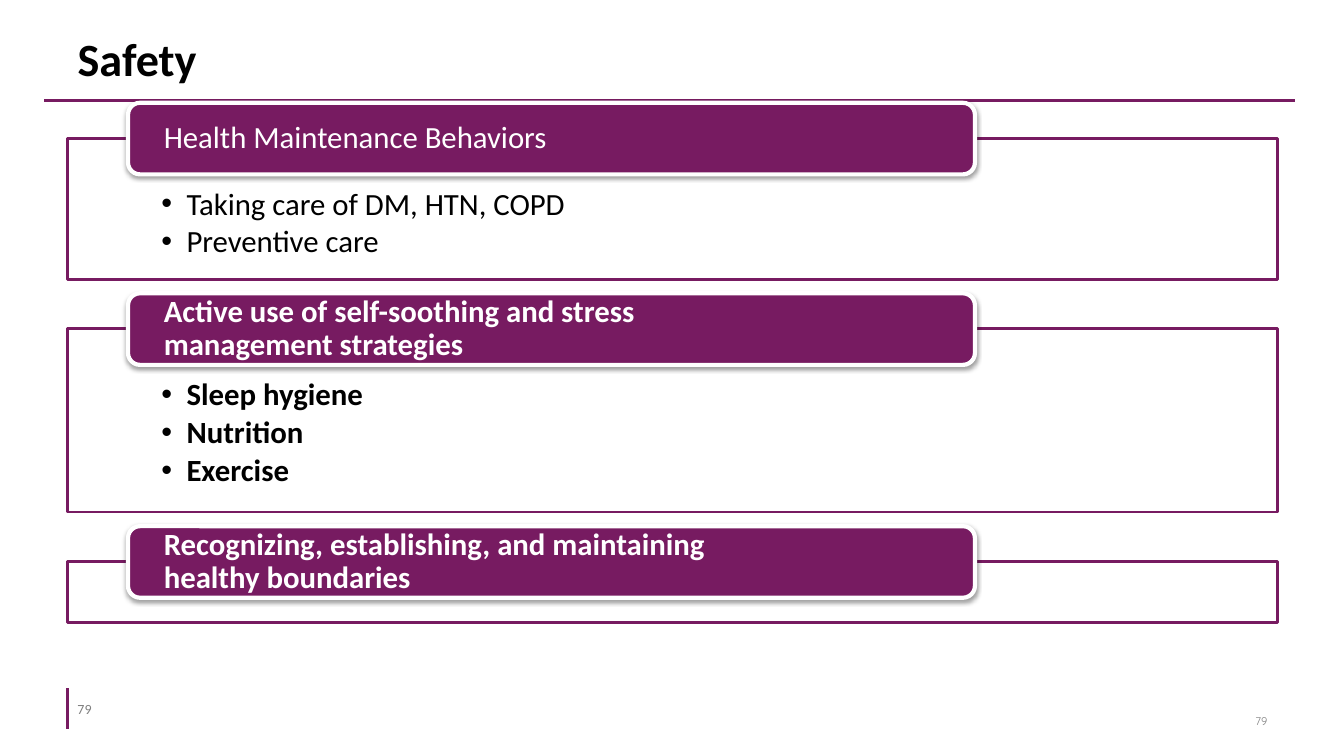
from lxml import etree
from pptx import Presentation
from pptx.dml.color import RGBColor
from pptx.enum.shapes import MSO_CONNECTOR as CONN, MSO_SHAPE as SHAPE
from pptx.enum.text import MSO_ANCHOR as ANCHOR, MSO_AUTO_SIZE as AUTO, PP_ALIGN as ALIGN
from pptx.oxml import parse_xml
from pptx.oxml.ns import nsdecls, qn
from pptx.util import Inches, Pt

PLUM = RGBColor(0x77, 0x1B, 0x61)
WHITE = RGBColor(0xFF, 0xFF, 0xFF)
BLACK = RGBColor(0, 0, 0)
GRAY = RGBColor(0x80, 0x80, 0x80)

LEFT, WIDTH = 0.67, 12
FIRST_TOP, GAP = 1.37, 0.49
TAB_RISE = 0.35

SECTIONS = [
    ("Health Maintenance Behaviors", ["Taking care of DM, HTN, COPD", "Preventive care"], 1.4, False),
    ("Active use of self-soothing and stress\nmanagement strategies",
     ["Sleep hygiene", "Nutrition", "Exercise"], 1.82, True),
    ("Recognizing, establishing, and maintaining\nhealthy boundaries", [], 0.61, True),
]


def place(sp, x, y, w, h):
    """Move and size a shape, in inches."""
    sp.left, sp.top, sp.width, sp.height = (Inches(v) for v in (x, y, w, h))


def set_frame(tf, anchor, insets=(0.1, 0.05, 0.1, 0.05)):
    """Set wrapping, anchor and insets of a text frame."""
    tf.word_wrap = True
    tf.auto_size = AUTO.NONE
    tf.vertical_anchor = anchor
    tf.margin_left, tf.margin_top, tf.margin_right, tf.margin_bottom = map(Inches, insets)


def format_paragraph(p, size, color, bold=False, name="Calibri", align=ALIGN.LEFT, after=0, spacing=0.9):
    """Format a paragraph and all of its runs."""
    p.alignment = align
    p.line_spacing = spacing
    p.space_before, p.space_after = Pt(0), Pt(after)
    for r in p.runs:
        r.font.name, r.font.size, r.font.bold = name, Pt(size), bold
        r.font.color.rgb = color


def add_rule(slide, x1, y1, x2, y2):
    """Add a plum line without a shadow."""
    line = slide.shapes.add_connector(CONN.STRAIGHT, *map(Inches, (x1, y1, x2, y2)))
    line.line.color.rgb = PLUM
    line.line.width = Pt(2.25)
    etree.SubElement(line._element.spPr, qn("a:effectLst"))


def add_number(slide, text, box, size, name, align, after=0):
    """Add a gray page number."""
    tf = slide.shapes.add_textbox(*map(Inches, box)).text_frame
    set_frame(tf, ANCHOR.MIDDLE)
    tf.text = text
    format_paragraph(tf.paragraphs[0], size, GRAY, name=name, align=align, after=after, spacing=1)


def set_title(sp, text):
    """Fill and format the title placeholder."""
    place(sp, LEFT, 0.3, WIDTH, 0.62)
    set_frame(sp.text_frame, ANCHOR.MIDDLE)
    sp.text_frame.text = text
    format_paragraph(sp.text_frame.paragraphs[0], 33, BLACK, bold=True)


def style_panel(sp, top, height):
    """Make a shape an outlined, nearly opaque white panel."""
    place(sp, LEFT, top, WIDTH, height)
    sp.fill.solid()
    sp.fill.fore_color.rgb = WHITE
    color = sp._element.spPr.find(qn("a:solidFill"))[0]
    etree.SubElement(color, qn("a:alpha"), val="90000")
    sp.line.color.rgb = PLUM
    sp.line.width = Pt(2)


def fill_list(tf, items, bold):
    """Write a bulleted list into a body placeholder."""
    set_frame(tf, ANCHOR.TOP, (0.93, 0.5, 0.93, 0.17))
    tf.text = "\n".join(items)
    for p in tf.paragraphs:
        pPr = p._p.get_or_add_pPr()
        pPr.set("marL", str(Inches(0.25)))
        pPr.set("indent", str(Inches(-0.25)))
        format_paragraph(p, 22, BLACK, bold, after=3.3)


def add_tab(slide, text, top, bold):
    """Add a rounded heading with a soft shadow below it."""
    sp = slide.shapes.add_shape(SHAPE.ROUNDED_RECTANGLE, *map(Inches, (1.27, top, 8.4, 0.71)))
    sp.fill.solid()
    sp.fill.fore_color.rgb = PLUM
    sp.line.color.rgb = WHITE
    sp.line.width = Pt(3)
    sp.shadow.inherit = False
    sp._element.spPr.find(qn("a:effectLst")).append(parse_xml(
        f'<a:outerShdw {nsdecls("a")} blurRad="{Pt(3.1)}" dist="{Pt(1.6)}" dir="5400000" rotWithShape="0">'
        '<a:srgbClr val="000000"><a:alpha val="38000"/></a:srgbClr></a:outerShdw>'))
    set_frame(sp.text_frame, ANCHOR.MIDDLE, (0.32, 0, 0.32, 0))
    p = sp.text_frame.paragraphs[0]
    p.text = text
    format_paragraph(p, 22, WHITE, bold)


def main():
    """Build and save the slide."""
    prs = Presentation()
    prs.slide_width, prs.slide_height = Inches(13.33), Inches(7.5)
    slide = prs.slides.add_slide(prs.slide_layouts[3])
    title, *bodies = slide.placeholders
    set_title(title, "Safety")
    add_rule(slide, LEFT, 7.23, LEFT, 6.83)
    add_rule(slide, 0.44, 1, 12.84, 1)
    add_number(slide, "79", (LEFT, 6.83, 0.61, 0.4), 10, "Calibri", ALIGN.LEFT)
    add_number(slide, "79", (9.56, 6.95, 3.11, 0.4), 8, "Quicksand", ALIGN.RIGHT, after=6)

    top = FIRST_TOP
    for heading, items, height, bold in SECTIONS:
        if items:
            panel = bodies.pop(0)
            fill_list(panel.text_frame, items, bold)
        else:
            panel = slide.shapes.add_shape(SHAPE.RECTANGLE, 0, 0, 0, 0)
            panel.shadow.inherit = False
        style_panel(panel, top, height)
        add_tab(slide, heading, top - TAB_RISE, bold)
        top += height + GAP
    prs.save("out.pptx")


if __name__ == "__main__":
    main()
